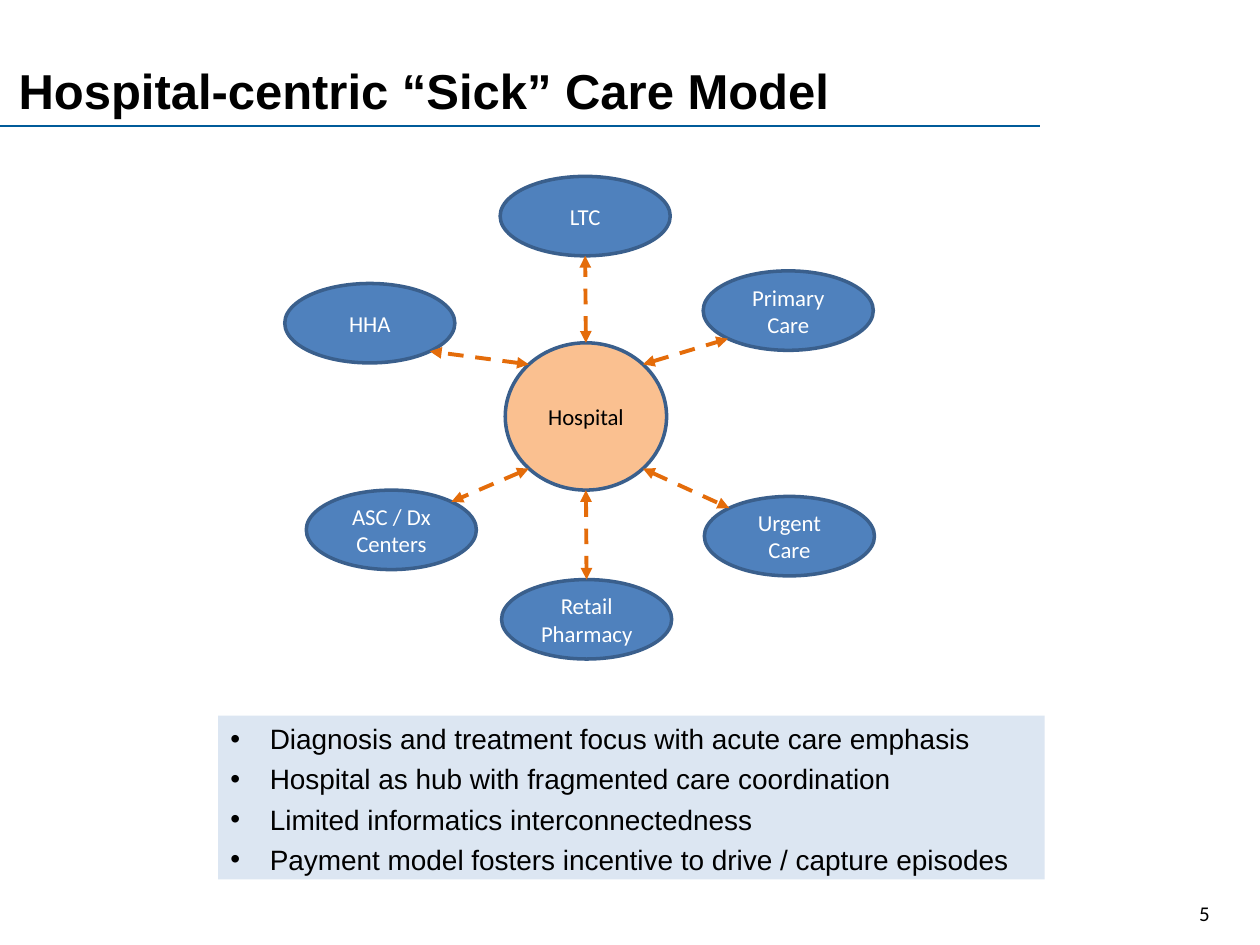
import math
import pptx
import pptx.util
import pptx.dml.color
import pptx.enum.dml
import pptx.enum.shapes
import pptx.enum.text
import pptx.oxml.ns
import lxml.etree

Pt = pptx.util.Pt
RGBColor = pptx.dml.color.RGBColor
Shape = pptx.enum.shapes.MSO_SHAPE
Align = pptx.enum.text.PP_ALIGN
Anchor = pptx.enum.text.MSO_ANCHOR
qn = pptx.oxml.ns.qn

BLACK = RGBColor(0x00, 0x00, 0x00)
WHITE = RGBColor(0xFF, 0xFF, 0xFF)
RULE_BLUE = RGBColor(0x00, 0x5B, 0x99)
SITE_BLUE = RGBColor(0x4F, 0x81, 0xBD)
OUTLINE_BLUE = RGBColor(0x3A, 0x5F, 0x8C)
PANEL_BLUE = RGBColor(0xDC, 0xE6, 0xF2)
HUB_PEACH = RGBColor(0xFA, 0xC0, 0x90)
LINK_ORANGE = RGBColor(0xE4, 0x6C, 0x0A)

HUB_CENTER = (334.8, 238)
HUB_SIZE = (92.2, 84.2)
SITE_SIZE = (97.2, 45.4)
SITES = [
    ("HHA", (211.3, 184.7), (-1, -1)),
    ("LTC", (334.4, 123.5), (0, -1)),
    ("Primary Care", (450.4, 177.5), (1, -1)),
    ("ASC / Dx Centers", (223.6, 302.8), (-1, 1)),
    ("Urgent Care", (451.1, 306.4), (1, 1)),
    ("Retail Pharmacy", (335.2, 353.9), (0, 1)),
]
POINTS = [
    "Diagnosis and treatment focus with acute care emphasis",
    "Hospital as hub with fragmented care coordination",
    "Limited informatics interconnectedness",
    "Payment model fosters incentive to drive / capture episodes",
]


def rim_point(center, size, direction):
    reach = math.hypot(*direction)
    return tuple(
        round(middle + extent / 2 * step / reach, 2)
        for middle, extent, step in zip(center, size, direction)
    )


class SlideBuilder:
    heading_font = "Arial"
    label_font = "Calibri"

    def __init__(self, page):
        self.page = page

    def style(self, para, name, size, color, bold=False):
        para.font.name = name
        para.font.size = Pt(size)
        para.font.color.rgb = color
        para.font.bold = bold

    def text(self, content, left, top, width, height, name, size, bold=False):
        box = self.page.shapes.add_textbox(Pt(left), Pt(top), Pt(width), Pt(height))
        box.text_frame.word_wrap = True
        para = box.text_frame.paragraphs[0]
        para.text = content
        self.style(para, name, size, BLACK, bold)

    def shape(self, kind, left, top, width, height, fill):
        shape = self.page.shapes.add_shape(kind, Pt(left), Pt(top), Pt(width), Pt(height))
        shape.shadow.inherit = False
        shape.fill.solid()
        shape.fill.fore_color.rgb = fill
        shape.text_frame.word_wrap = True
        return shape

    def ellipse(self, label, center, size, fill, color):
        left, top = (middle - extent / 2 for middle, extent in zip(center, size))
        shape = self.shape(Shape.OVAL, left, top, *size, fill)
        shape.line.color.rgb = OUTLINE_BLUE
        shape.line.width = Pt(2)
        shape.text_frame.vertical_anchor = Anchor.MIDDLE
        para = shape.text_frame.paragraphs[0]
        para.text = label
        para.alignment = Align.CENTER
        self.style(para, self.label_font, 13, color)

    def line(self, start, end, color, width):
        line = self.page.shapes.add_connector(
            pptx.enum.shapes.MSO_CONNECTOR.STRAIGHT, *map(Pt, start + end)
        )
        line.line.color.rgb = color
        line.line.width = Pt(width)
        lxml.etree.SubElement(line._element.spPr, qn("a:effectLst"))
        return line

    def link(self, start, end):
        link = self.line(start, end, LINK_ORANGE, 2.25)
        link.line.dash_style = pptx.enum.dml.MSO_LINE.DASH
        outline = link.line._get_or_add_ln()
        for tip in ("a:headEnd", "a:tailEnd"):
            lxml.etree.SubElement(outline, qn(tip), type="triangle")

    def bullet_panel(self, items, left, top, width, height):
        panel = self.shape(Shape.RECTANGLE, left, top, width, height, PANEL_BLUE)
        panel.line.fill.background()
        frame = panel.text_frame
        frame.vertical_anchor = Anchor.TOP
        for index, item in enumerate(items):
            para = frame.add_paragraph() if index else frame.paragraphs[0]
            para.text = item
            para.alignment = Align.LEFT
            para.space_after = Pt(3.7)
            properties = para._p.get_or_add_pPr()
            properties.set("marL", str(Pt(22.5)))
            properties.set("indent", str(Pt(-22.5)))
            lxml.etree.SubElement(properties, qn("a:buFont"), typeface="Arial")
            lxml.etree.SubElement(properties, qn("a:buChar"), char="•")
            self.style(para, self.heading_font, 16, BLACK)


def main():
    deck = pptx.Presentation()
    deck.slide_width, deck.slide_height = Pt(720), Pt(540)
    builder = SlideBuilder(deck.slides.add_slide(deck.slide_layouts[6]))

    builder.text("5", 678.2, 511.2, 41.8, 28.8, builder.label_font, 12)
    builder.line((0, 72), (594, 72), RULE_BLUE, 0.75)
    builder.text("Hospital-centric “Sick” Care Model", 3.6, 31, 695.5, 41,
                 builder.heading_font, 28, bold=True)

    builder.ellipse("Hospital", HUB_CENTER, HUB_SIZE, HUB_PEACH, BLACK)
    for label, center, _ in SITES:
        builder.ellipse(label, center, SITE_SIZE, SITE_BLUE, WHITE)
    builder.bullet_panel(POINTS, 124.6, 409, 472.3, 93.6)
    for _, center, (across, down) in SITES:
        builder.link(
            rim_point(HUB_CENTER, HUB_SIZE, (across, down)),
            rim_point(center, SITE_SIZE, (-across, -down)),
        )

    deck.save("out.pptx")


if __name__ == "__main__":
    main()
